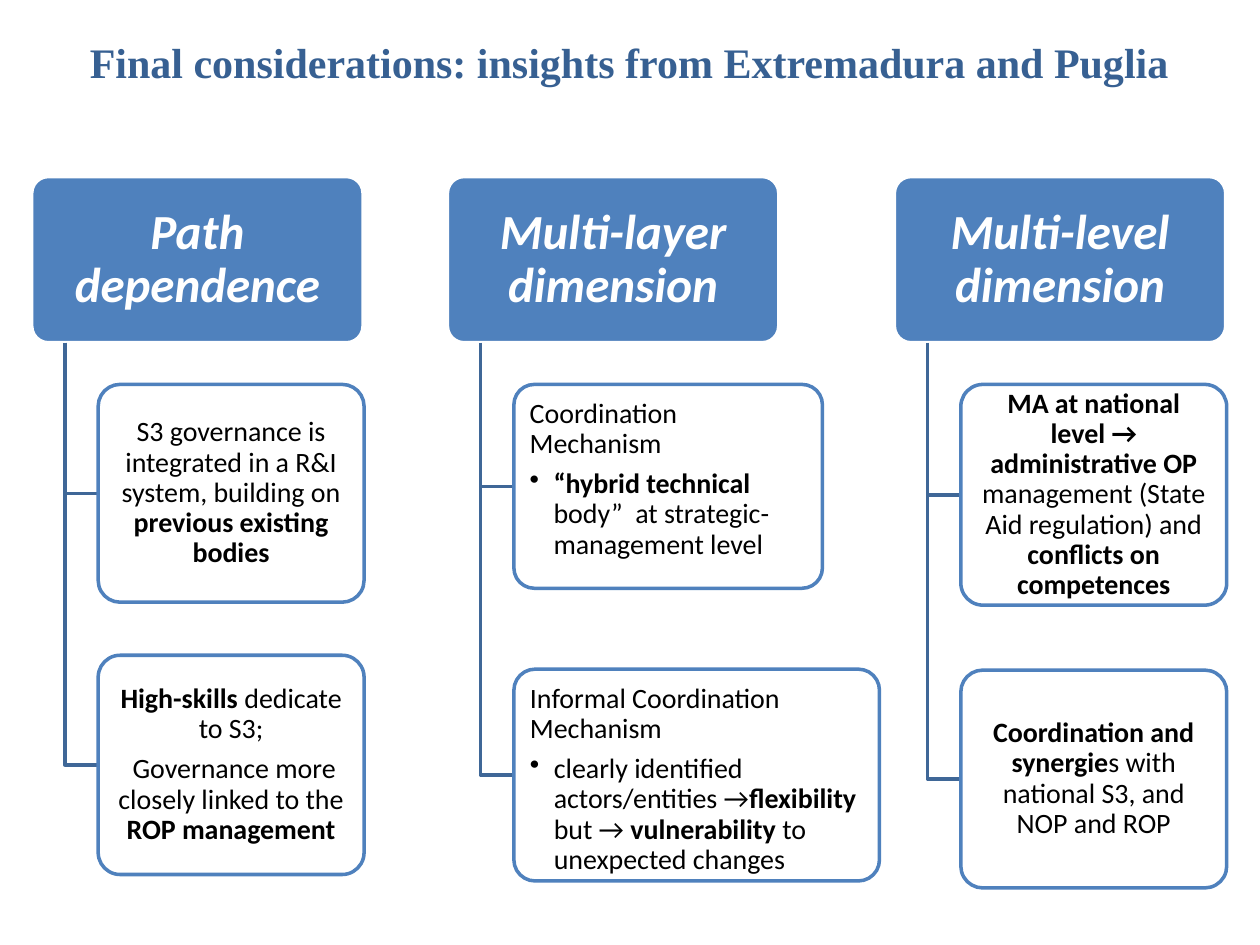
from lxml.etree import SubElement
from pptx import Presentation
from pptx.dml.color import RGBColor
from pptx.enum.shapes import MSO_SHAPE
from pptx.enum.text import MSO_ANCHOR, PP_ALIGN
from pptx.oxml.ns import qn
from pptx.util import Cm, Pt

WHITE = RGBColor(0xFF, 0xFF, 0xFF)
BLACK = RGBColor(0x00, 0x00, 0x00)
BLUE = RGBColor(0x4F, 0x81, 0xBD)
LINE_BLUE = RGBColor(0x3F, 0x67, 0x97)
TITLE_BLUE = RGBColor(0x37, 0x60, 0x92)

HEADER_TOP, HEADER_W, HEADER_H = 3.56, 6.68, 3.35
HEADER_BOTTOM = HEADER_TOP + HEADER_H
TRUNK_DX, BOX_DX = 0.67, 1.34

# Column: left, heading, boxes. Box: top, width, height, bulleted, paragraphs.
# Paragraph: list of (text, bold). Lengths in cm.
COLUMNS = [
    (0.64, "Path dependence", [
        (7.75, 5.36, 4.39, False, [
            [("S3 governance is integrated in a R&I system, building on ", False),
             ("previous existing bodies", True)]]),
        (13.21, 5.36, 4.42, False, [
            [("High-skills ", True), ("dedicate to S3;", False)],
            [(" Governance more closely linked to the ", False),
             ("ROP management", True)]]),
    ]),
    (9.02, "Multi-layer dimension", [
        (7.75, 6.22, 4.11, True, [
            [("Coordination Mechanism", False)],
            [("“hybrid technical ", True),
             ("body”  at strategic-management level", False)]]),
        (13.49, 7.37, 4.27, True, [
            [("Informal Coordination Mechanism", False)],
            [("clearly identified actors/entities →", False),
             ("flexibility ", True), ("but → ", False),
             ("vulnerability", True), (" to unexpected changes", False)]]),
    ]),
    (18.03, "Multi-level dimension", [
        (7.75, 5.36, 4.45, False, [
            [("MA at national level → administrative OP ", True),
             ("management (State Aid regulation) and ", False),
             ("conflicts on competences", True)]]),
        (13.51, 5.36, 4.39, False, [
            [("Coordination and synergie", True),
             ("s with national S3, and NOP and ROP", False)]]),
    ]),
]


def add_box(left, top, width, height, fill, line, inset_x, inset_y):
    sp = slide.shapes.add_shape(MSO_SHAPE.ROUNDED_RECTANGLE,
                                Cm(left), Cm(top), Cm(width), Cm(height))
    sp.adjustments[0] = 0.1
    sp.shadow.inherit = False
    sp.fill.solid()
    sp.fill.fore_color.rgb = fill
    sp.line.color.rgb = line
    sp.line.width = Pt(2)
    tf = sp.text_frame
    tf.word_wrap = True
    tf.vertical_anchor = MSO_ANCHOR.MIDDLE
    tf.margin_left = tf.margin_right = Cm(inset_x)
    tf.margin_top = tf.margin_bottom = Cm(inset_y)
    return sp


def fill_paragraph(p, runs, size, color, align, after, italic=False):
    p.alignment = align
    p.line_spacing = 0.9
    p.space_after = Pt(after)
    for text, bold in runs:
        r = p.add_run()
        r.text = text
        r.font.name = "Calibri"
        r.font.size = Pt(size)
        r.font.bold = bold
        r.font.italic = italic
        r.font.color.rgb = color


prs = Presentation()
prs.slide_width, prs.slide_height = Cm(25.4), Cm(19.05)
slide = prs.slides.add_slide(prs.slide_layouts[6])

title = slide.shapes.add_textbox(Cm(1.09), Cm(0.61), Cm(23.19), Cm(1.27))
title.text_frame.word_wrap = True
p = title.text_frame.paragraphs[0]
p.text = "Final considerations: insights from Extremadura and Puglia"
p.alignment = PP_ALIGN.CENTER
font = p.runs[0].font
font.name, font.size, font.bold = "Times New Roman", Pt(24), True
font.color.rgb = TITLE_BLUE

for left, heading, boxes in COLUMNS:
    header = add_box(left, HEADER_TOP, HEADER_W, HEADER_H, BLUE, WHITE, 0.25, 0.2)
    fill_paragraph(header.text_frame.paragraphs[0], [(heading, True)], 28, WHITE,
                   PP_ALIGN.CENTER, 9.8, italic=True)

    trunk_x, box_x = left + TRUNK_DX, left + BOX_DX
    for top, width, height, bulleted, paragraphs in boxes:
        middle = top + height / 2
        builder = slide.shapes.build_freeform(Cm(trunk_x), Cm(HEADER_BOTTOM))
        builder.add_line_segments([(Cm(trunk_x), Cm(middle)),
                                   (Cm(box_x), Cm(middle))], close=False)
        branch = builder.convert_to_shape()
        branch.shadow.inherit = False
        branch.fill.background()
        branch.line.color.rgb = LINE_BLUE
        branch.line.width = Pt(2)

        box = add_box(box_x, top, width, height, WHITE, BLUE, 0.2, 0.18)
        srgb = box.fill._xPr.find(qn("a:solidFill"))[0]
        SubElement(srgb, qn("a:alpha"), val="90000")
        tf = box.text_frame
        if bulleted:
            tf.vertical_anchor = MSO_ANCHOR.TOP
        align = PP_ALIGN.LEFT if bulleted else PP_ALIGN.CENTER
        for i, runs in enumerate(paragraphs):
            p = tf.add_paragraph() if i else tf.paragraphs[0]
            is_bullet = bulleted and i > 0
            fill_paragraph(p, runs, 16, BLACK, align, 2.4 if is_bullet else 5.6)
            if is_bullet:
                p.level = 1
                pPr = p._p.get_or_add_pPr()
                pPr.set("marL", str(Cm(0.48)))
                pPr.set("indent", str(-Cm(0.48)))
                SubElement(pPr, qn("a:buChar"), char="•")

prs.save("out.pptx")
